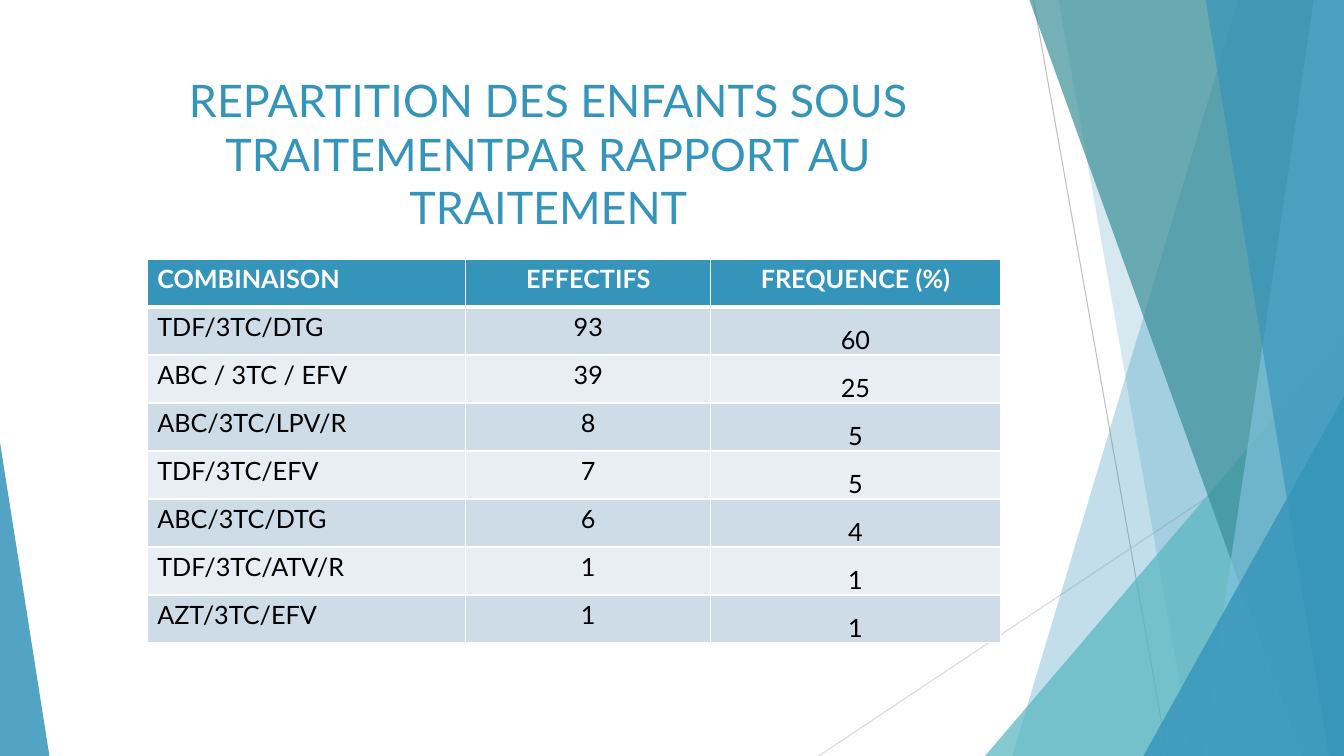
"""Build the slide on children under treatment by drug combination."""
from lxml import etree
from pptx import Presentation
from pptx.dml.color import RGBColor
from pptx.enum.shapes import MSO_CONNECTOR, MSO_SHAPE
from pptx.enum.text import MSO_ANCHOR, MSO_AUTO_SIZE, PP_ALIGN
from pptx.oxml.ns import qn
from pptx.util import Inches, Pt

LINE = MSO_CONNECTOR.STRAIGHT
TRIANGLE = MSO_SHAPE.ISOSCELES_TRIANGLE
TOP, BOTTOM = MSO_ANCHOR.TOP, MSO_ANCHOR.BOTTOM
LEFT, CENTER = PP_ALIGN.LEFT, PP_ALIGN.CENTER
NO_FIT = MSO_AUTO_SIZE.NONE
WIDE, HIGH = 13.33, 7.5
BLUE, WHITE, BLACK = "3494BA", "FFFFFF", "000000"
FONT = "Lato"


def tint(color, code):
    color.rgb = RGBColor.from_string(code)


def write(frame, text, size, code, align, bold=False):
    para = frame.paragraphs[0]
    para.alignment = align
    run = para.add_run()
    run.text = text
    run.font.name = FONT
    run.font.size = Pt(size)
    run.font.bold = bold
    tint(run.font.color, code)


deck = Presentation()
deck.slide_width, deck.slide_height = Inches(WIDE), Inches(HIGH)
slide = deck.slides.add_slide(deck.slide_layouts[5])
shapes = slide.shapes

rays = [(10.25, 0, 11.58, HIGH, "BFBFBF"), (WIDE, 4.03, 8.12, HIGH, "D9D9D9")]
for *ends, code in rays:
    ray = shapes.add_connector(LINE, *map(Inches, ends))
    ray.line.width = Pt(0.75)
    tint(ray.line.color, code)
    etree.SubElement(ray.element.spPr, qn("a:effectLst"))

# Bands give top and bottom x; triangles give left, top, width, height, apex.
facets = [
    ((12.28, 10.04), BLUE, 30),
    ((10.5, 11.83), BLUE, 20),
    ((9.77, 3.33, 3.56, 4.17, 1), "58B6C0", 72),
    ((10.21, 12.91), "3A8F98", 70),
    ((13.03, 11.92), "7FC1DB", 70),
    ((11.96, 13.18), BLUE, 65),
    ((11.34, 3.93, 1.99, 3.57, 1), BLUE, 80),
    ((0, 4.39, 0.49, 3.11, 0), BLUE, 85),
]
for form, code, alpha in facets:
    if len(form) == 2:
        upper, lower = form
        pen = shapes.build_freeform(Inches(upper), 0)
        corners = [(WIDE, 0), (WIDE, HIGH), (lower, HIGH)]
        pen.add_line_segments([(Inches(x), Inches(y)) for x, y in corners])
        facet = pen.convert_to_shape()
    else:
        *box, apex = form
        facet = shapes.add_shape(TRIANGLE, *map(Inches, box))
        facet.adjustments[0] = apex
    facet.shadow.inherit = False
    facet.line.fill.background()
    facet.fill.solid()
    tint(facet.fill.fore_color, code)
    color = facet.element.spPr.find(".//" + qn("a:srgbClr"))
    etree.SubElement(color, qn("a:alpha"), val=str(alpha * 1000))

title = shapes.title
title.left, title.top = Inches(0.74), Inches(0.67)
title.width, title.height = Inches(9.4), Inches(1.44)
frame = title.text_frame
frame.word_wrap = True
frame.auto_size = NO_FIT
frame.vertical_anchor = TOP
heading = "REPARTITION DES ENFANTS SOUS TRAITEMENTPAR RAPPORT AU TRAITEMENT"
write(frame, heading, 32, BLUE, CENTER)

rows = [
    ("COMBINAISON", "EFFECTIFS", "FREQUENCE (%)"),
    ("TDF/3TC/DTG", "93", "60"),
    ("ABC / 3TC / EFV", "39", "25"),
    ("ABC/3TC/LPV/R", "8", "5"),
    ("TDF/3TC/EFV", "7", "5"),
    ("ABC/3TC/DTG", "6", "4"),
    ("TDF/3TC/ATV/R", "1", "1"),
    ("AZT/3TC/EFV", "1", "1"),
]
widths = (3.16, 2.43, 2.87)
place = map(Inches, (1.46, 2.57, sum(widths), 3.81))
table = shapes.add_table(len(rows), len(widths), *place).table
for column, width in zip(table.columns, widths):
    column.width = Inches(width)

for r, row in enumerate(rows):
    head = r == 0
    shade = BLUE if head else ("E8EEF3", "CEDCE7")[r % 2]
    weights = {"lnL": 1, "lnR": 1, "lnT": 3 if r == 1 else 1, "lnB": 3 if head else 1}
    for c, text in enumerate(row):
        cell = table.cell(r, c)
        props = cell._tc.get_or_add_tcPr()
        for side, weight in weights.items():
            edge = etree.SubElement(props, qn("a:" + side), w=str(Pt(weight)))
            solid = etree.SubElement(edge, qn("a:solidFill"))
            etree.SubElement(solid, qn("a:srgbClr"), val=WHITE)
        cell.fill.solid()
        tint(cell.fill.fore_color, shade)
        if c == 2 and not head:
            cell.vertical_anchor = BOTTOM
            cell.margin_left = cell.margin_right = cell.margin_top = Inches(0.01)
            cell.margin_bottom = 0
        ink = WHITE if head else BLACK
        write(cell.text_frame, text, 18, ink, CENTER if c else LEFT, head)

deck.save("out.pptx")
